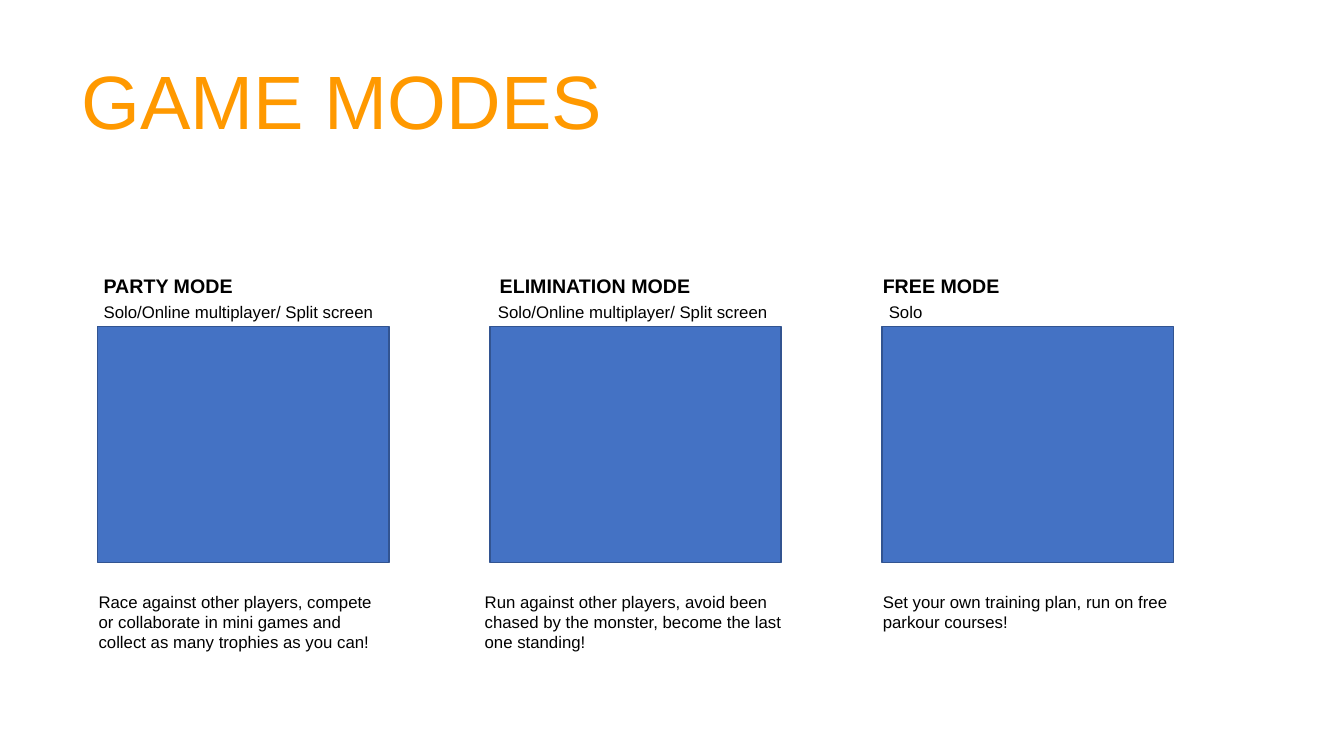
from dataclasses import dataclass

from pptx import Presentation
from pptx.dml.color import RGBColor
from pptx.enum.shapes import MSO_SHAPE
from pptx.util import Pt


@dataclass(frozen=True)
class Theme:
    font: str = "Arial"
    title: RGBColor = RGBColor(0xFF, 0x99, 0x00)
    text: RGBColor = RGBColor(0, 0, 0)
    panel: RGBColor = RGBColor(0x44, 0x72, 0xC4)
    outline: RGBColor = RGBColor(0x32, 0x54, 0x91)
    title_size: int = 54
    heading_size: int = 14
    body_size: int = 12


@dataclass(frozen=True)
class Mode:
    """One game mode; each dx shifts a text box from the panel's left edge."""
    name: str
    players: str
    description: str
    name_dx: float
    players_dx: float
    description_dx: float
    description_width: float


THEME = Theme()
LEFT, TOP, WIDTH, HEIGHT, PITCH = 69.84, 233.28, 208.08, 168.48, 280.08

MODES = [
    Mode("PARTY MODE", "Solo/Online multiplayer/ Split screen",
         "Race against other players, compete or collaborate in mini games "
         "and collect as many trophies as you can!",
         -2.9, -2.9, -6.5, 212.4),
    Mode("ELIMINATION MODE", "Solo/Online multiplayer/ Split screen",
         "Run against other players, avoid been chased by the monster, "
         "become the last one standing!",
         0, -1.4, -10.8, 229.7),
    Mode("FREE MODE", "Solo",
         "Set your own training plan, run on free parkour courses!",
         -6.5, -2.2, -6.5, 229.7),
]


def add_text(s, text, x, y, w, h, size, color=THEME.text, bold=False):
    tf = s.shapes.add_textbox(Pt(x), Pt(y), Pt(w), Pt(h)).text_frame
    tf.word_wrap = True
    p = tf.paragraphs[0]
    p.text = text
    p.font.name = THEME.font
    p.font.size = Pt(size)
    p.font.bold = bold
    p.font.color.rgb = color


def add_panel(s, x, y, w, h):
    sp = s.shapes.add_shape(MSO_SHAPE.RECTANGLE, Pt(x), Pt(y), Pt(w), Pt(h))
    sp.shadow.inherit = False
    sp.fill.solid()
    sp.fill.fore_color.rgb = THEME.panel
    sp.line.color.rgb = THEME.outline
    sp.line.width = Pt(1)


def add_mode(s, mode, x, y, w, h):
    """Place a panel in the given box, with headings above and text below."""
    add_panel(s, x, y, w, h)
    add_text(s, mode.name, x + mode.name_dx, y - 41.2, 151.2, 24.5,
             THEME.heading_size, bold=True)
    add_text(s, mode.players, x + mode.players_dx, y - 21.6, 212.4, 21.6,
             THEME.body_size)
    add_text(s, mode.description, x + mode.description_dx, y + h + 17.3,
             mode.description_width, 51, THEME.body_size)


def add_game_modes_slide(prs):
    s = prs.slides.add_slide(prs.slide_layouts[6])
    add_text(s, "GAME MODES", 51.1, 34.6, 436.3, 72.7,
             THEME.title_size, THEME.title)
    for i, mode in enumerate(MODES):
        add_mode(s, mode, LEFT + i * PITCH, TOP, WIDTH, HEIGHT)


def main():
    prs = Presentation()
    prs.slide_width, prs.slide_height = Pt(960), Pt(540)
    add_game_modes_slide(prs)
    prs.save("out.pptx")


if __name__ == "__main__":
    main()
